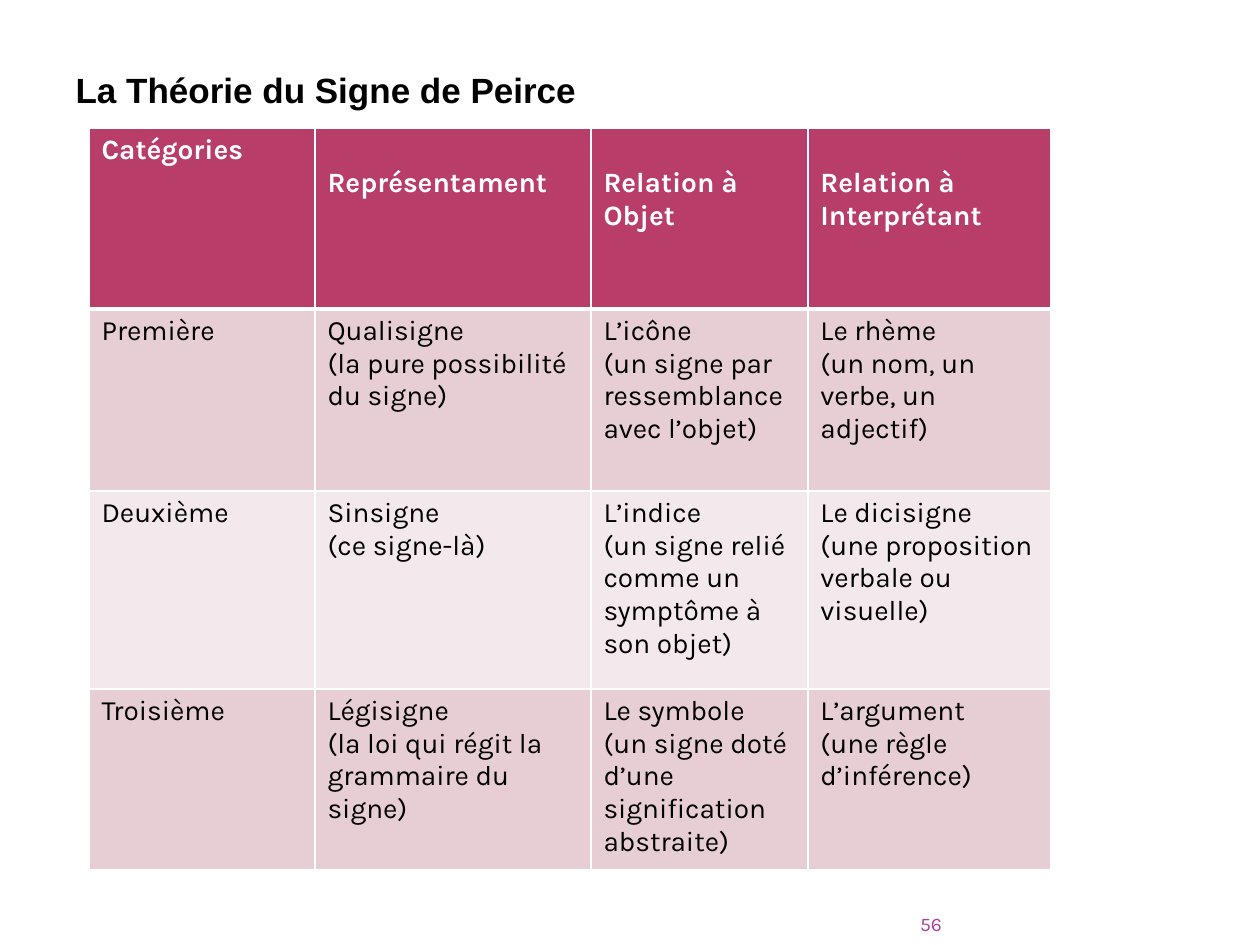
from lxml.etree import SubElement
from pptx import Presentation
from pptx.dml.color import RGBColor
from pptx.enum.text import MSO_ANCHOR as ANCHOR, MSO_AUTO_SIZE as AUTOSIZE, PP_ALIGN as ALIGN
from pptx.oxml.ns import qn
from pptx.util import Emu, Pt

BLACK = RGBColor(0x00, 0x00, 0x00)
WHITE = RGBColor(0xFF, 0xFF, 0xFF)
RASPBERRY = RGBColor(0xB8, 0x3D, 0x68)
ROSE = RGBColor(0xE6, 0xCE, 0xD4)
PALE_ROSE = RGBColor(0xF3, 0xE8, 0xEB)
MAGENTA = RGBColor(0xB1, 0x3F, 0x9A)

COLUMN_WIDTHS = [226, 276, 217, 243]
ROW_HEIGHTS = [181, 182, 198, 181]
ROW_FILLS = [RASPBERRY, ROSE, PALE_ROSE, ROSE]
CELL_MARGIN = 6
HEADER_DROP = 33

SIGNS = [
    ["Catégories", "Représentament", "Relation à\nObjet", "Relation à\nInterprétant"],
    ["Première", "Qualisigne\n(la pure possibilité du signe)",
     "L’icône\n(un signe par ressemblance avec l’objet)",
     "Le rhème\n(un nom, un verbe, un adjectif)"],
    ["Deuxième", "Sinsigne\n(ce signe-là)",
     "L’indice\n(un signe relié comme un symptôme à son objet)",
     "Le dicisigne\n(une proposition\nverbale ou visuelle)"],
    ["Troisième", "Légisigne\n(la loi qui régit la grammaire du signe)",
     "Le symbole\n(un signe doté d’une signification abstraite)",
     "L’argument\n(une règle d’inférence)"],
]


def px(n):
    return Emu(round(n * 914400 / 126))


def write(tf, text, font="Karla", size=16, color=BLACK, bold=False, align=ALIGN.LEFT):
    tf.text = text
    tf.word_wrap = True
    for p in tf.paragraphs:
        p.alignment = align
        for r in p.runs:
            r.font.name = font
            r.font.size = Pt(size)
            r.font.bold = bold
            r.font.color.rgb = color


def set_borders(cell, color=WHITE, **widths):
    """Draw the cell's sides; widths are in points, keyed L, R, T and B."""
    tcPr = cell._tc.get_or_add_tcPr()
    for i, side in enumerate("LRTB"):
        ln = SubElement(tcPr, qn(f"a:ln{side}"), w=str(Pt(widths.get(side, 1))))
        fill = SubElement(ln, qn("a:solidFill"))
        SubElement(fill, qn("a:srgbClr"), val=str(color))
        tcPr.insert(i, ln)


def add_title(slide, text, left, top, width, height):
    sp = slide.shapes.title
    sp.left, sp.top, sp.width, sp.height = map(px, (left, top, width, height))
    tf = sp.text_frame
    tf.auto_size = AUTOSIZE.NONE
    tf.vertical_anchor = ANCHOR.TOP
    write(tf, text, font="Arial", size=20, bold=True)


def add_sign_table(slide, left, top):
    box = map(px, (left, top, sum(COLUMN_WIDTHS), sum(ROW_HEIGHTS)))
    table = slide.shapes.add_table(len(SIGNS), len(COLUMN_WIDTHS), *box).table
    for column, width in zip(table.columns, COLUMN_WIDTHS):
        column.width = px(width)
    for i, (row, height, fill) in enumerate(zip(table.rows, ROW_HEIGHTS, ROW_FILLS)):
        row.height = px(height)
        header = i == 0
        for j, (cell, text) in enumerate(zip(row.cells, SIGNS[i])):
            dropped = header and j > 0
            cell.margin_top = px(CELL_MARGIN + HEADER_DROP * dropped)
            cell.margin_bottom = px(CELL_MARGIN)
            cell.fill.solid()
            cell.fill.fore_color.rgb = fill
            set_borders(cell, T=3 if i == 1 else 1, B=3 if header else 1)
            write(cell.text_frame, text, color=WHITE if header else BLACK, bold=header)


def add_page_number(slide, number, left, top, width, height):
    tf = slide.shapes.add_textbox(*map(px, (left, top, width, height))).text_frame
    tf.margin_left = tf.margin_top = tf.margin_right = tf.margin_bottom = 0
    tf.vertical_anchor = ANCHOR.BOTTOM
    write(tf, str(number), size=11, color=MAGENTA, align=ALIGN.RIGHT)


def main():
    prs = Presentation()
    prs.slide_width, prs.slide_height = px(1260), px(945)
    slide = prs.slides.add_slide(prs.slide_layouts[5])
    add_title(slide, "La Théorie du Signe de Peirce", 63, 62, 998, 60)
    add_sign_table(slide, 89, 128)
    add_page_number(slide, 56, 862, 903, 80, 32)
    prs.save("out.pptx")


if __name__ == "__main__":
    main()
